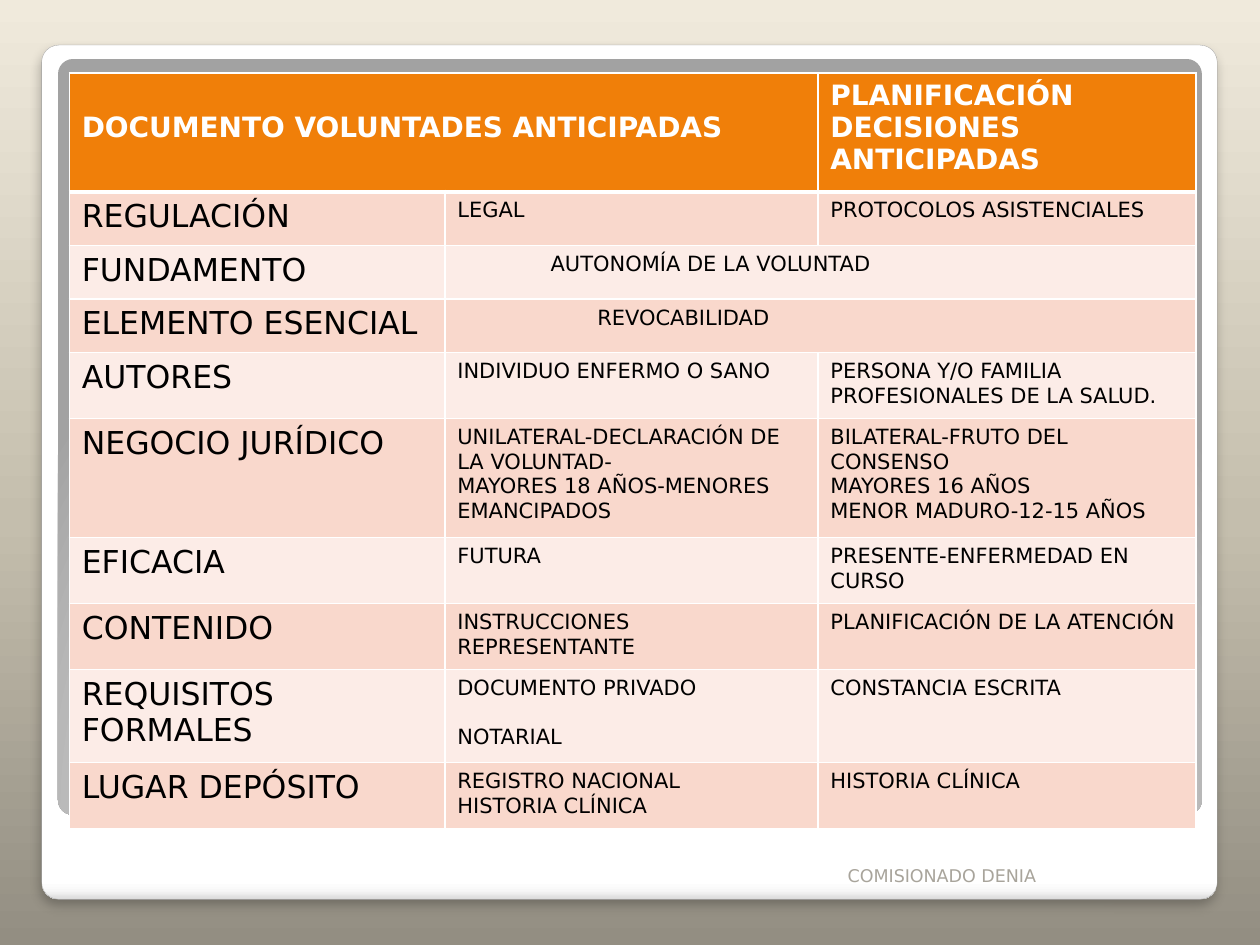
from dataclasses import dataclass

from lxml.etree import SubElement
from pptx import Presentation
from pptx.dml.color import RGBColor
from pptx.enum.shapes import MSO_SHAPE
from pptx.enum.text import MSO_ANCHOR
from pptx.oxml.ns import qn
from pptx.util import Cm, Pt


@dataclass(frozen=True)
class Theme:
    font: str = "DejaVu Sans"
    header: str = "F07F09"
    bands: tuple = ("F9D8CC", "FCECE7")
    white: str = "FFFFFF"
    text: str = "000000"
    edge: str = "A4A4A4"
    footer: str = "A8A49B"
    backdrop: tuple = ((0, "938E82"), (45, "C4BEAD"), (100, "F0EADC"))
    card: tuple = ((0, "FFFFFF"), (98, "FFFFFF"), (99, "F7F7F7"), (100, "DADADA"))
    panel: tuple = ((0, "FFFFFF"), (55, "E1E1E1"), (100, "A2A2A2"))
    header_size: int = 16
    label_size: int = 18
    body_size: int = 12
    footer_size: int = 10


def write_text(frame, text, size, color, bold=False, gap=0):
    frame.word_wrap = True
    for index, line in enumerate(text.split("\n")):
        para = frame.paragraphs[0] if index == 0 else frame.add_paragraph()
        if index:
            para.space_before = Pt(gap)
        span = para.add_run()
        span.text = line
        span.font.name = theme.font
        span.font.size = Pt(size)
        span.font.bold = bold
        span.font.color.rgb = RGBColor.from_string(color)


def paint_gradient(fill, element, stops, angle=None, focus=None):
    fill.gradient()
    gradient = next(element.iter(qn("a:gradFill")))
    for child in list(gradient):
        gradient.remove(child)
    stop_list = SubElement(gradient, qn("a:gsLst"))
    for position, color in stops:
        stop = SubElement(stop_list, qn("a:gs"), pos=str(position * 1000))
        SubElement(stop, qn("a:srgbClr"), val=color)
    if focus:
        circle = SubElement(gradient, qn("a:path"), {"path": "circle"})
        sides = {side: str(value * 1000) for side, value in zip("ltrb", focus)}
        SubElement(circle, qn("a:fillToRect"), sides)
    else:
        SubElement(gradient, qn("a:lin"), ang=str(angle * 60000), scaled="0")


theme = Theme()
deck = Presentation()
deck.slide_width, deck.slide_height = Cm(25.4), Cm(19.05)
slide = deck.slides.add_slide(deck.slide_layouts[6])
paint_gradient(slide.background.fill, slide.element, theme.backdrop, angle=270)

card = slide.shapes.add_shape(
    MSO_SHAPE.ROUNDED_RECTANGLE, Cm(0.84), Cm(0.91), Cm(23.7), Cm(17.22))
panel = slide.shapes.add_shape(
    MSO_SHAPE.ROUNDED_RECTANGLE, Cm(1.17), Cm(1.19), Cm(23.06), Cm(15.24))
for shape in (card, panel):
    shape.adjustments[0] = 0.02
    shape.shadow.inherit = False
paint_gradient(card.fill, card.element, theme.card, angle=90)
paint_gradient(panel.fill, panel.element, theme.panel, focus=(50, 175, 50, -75))
card.line.color.rgb = RGBColor.from_string(theme.edge)
card.line.width = Pt(0.16)
panel.line.fill.background()

effects = next(card.element.iter(qn("a:effectLst")))
shadow = SubElement(effects, qn("a:outerShdw"), blurRad=str(Pt(6)), dist=str(Pt(4)),
                    dir=str(90 * 60000), algn="t", rotWithShape="0")
shadow_color = SubElement(shadow, qn("a:srgbClr"), val=theme.text)
SubElement(shadow_color, qn("a:alpha"), val="25000")

rows = [
    (2.4, "DOCUMENTO VOLUNTADES ANTICIPADAS", "", "PLANIFICACIÓN DECISIONES ANTICIPADAS"),
    (1.08, "REGULACIÓN", "LEGAL", "PROTOCOLOS ASISTENCIALES"),
    (1.08, "FUNDAMENTO", "AUTONOMÍA DE LA VOLUNTAD", ""),
    (1.08, "ELEMENTO ESENCIAL", "REVOCABILIDAD", ""),
    (1.33, "AUTORES", "INDIVIDUO ENFERMO O SANO",
     "PERSONA Y/O FAMILIA\nPROFESIONALES DE LA SALUD."),
    (2.4, "NEGOCIO JURÍDICO",
     "UNILATERAL-DECLARACIÓN DE LA VOLUNTAD-\nMAYORES 18 AÑOS-MENORES EMANCIPADOS",
     "BILATERAL-FRUTO DEL CONSENSO\nMAYORES 16 AÑOS\nMENOR MADURO-12-15 AÑOS"),
    (1.33, "EFICACIA", "FUTURA", "PRESENTE-ENFERMEDAD EN CURSO"),
    (1.33, "CONTENIDO", "INSTRUCCIONES\nREPRESENTANTE", "PLANIFICACIÓN DE LA ATENCIÓN"),
    (1.87, "REQUISITOS FORMALES", "DOCUMENTO PRIVADO\nNOTARIAL", "CONSTANCIA ESCRITA"),
    (1.33, "LUGAR DEPÓSITO", "REGISTRO NACIONAL\nHISTORIA CLÍNICA", "HISTORIA CLÍNICA"),
]
column_widths = (7.57, 7.52, 7.62)
merges = {0: (0, 1), 2: (1, 2), 3: (1, 2)}
left_margins = {(2, 1): 2.13, (3, 1): 3.07}
paragraph_gaps = {(8, 1): 14}

table = slide.shapes.add_table(
    len(rows), len(column_widths), Cm(1.4), Cm(1.47),
    Cm(sum(column_widths)), Cm(sum(row[0] for row in rows))).table
for column, width in zip(table.columns, column_widths):
    column.width = Cm(width)
for row_index, (first, last) in merges.items():
    table.cell(row_index, first).merge(table.cell(row_index, last))

for row_index, (height, *texts) in enumerate(rows):
    table.rows[row_index].height = Cm(height)
    is_header = row_index == 0
    fill_color = theme.header if is_header else theme.bands[(row_index - 1) % 2]
    for column_index, text in enumerate(texts):
        cell = table.cell(row_index, column_index)
        place = (row_index, column_index)
        cell.margin_left = Cm(left_margins.get(place, 0.25))
        cell.margin_top = Cm(0.79 if place == (0, 0) else 0.13)
        properties = cell._tc.get_or_add_tcPr()
        for side in "LRTB":
            thick = (is_header and side == "B") or (row_index == 1 and side == "T")
            border = SubElement(properties, qn(f"a:ln{side}"), w=str(Pt(3 if thick else 1)))
            border_fill = SubElement(border, qn("a:solidFill"))
            SubElement(border_fill, qn("a:srgbClr"), val=theme.white)
        cell.fill.solid()
        cell.fill.fore_color.rgb = RGBColor.from_string(fill_color)
        if not text:
            continue
        if is_header:
            size, color = theme.header_size, theme.white
        else:
            size = theme.body_size if column_index else theme.label_size
            color = theme.text
        write_text(cell.text_frame, text, size=size, color=color, bold=is_header,
                   gap=paragraph_gaps.get(place, 0))

footer = slide.shapes.add_textbox(Cm(16.84), Cm(16.97), Cm(6.35), Cm(1.02))
footer.text_frame.vertical_anchor = MSO_ANCHOR.BOTTOM
write_text(footer.text_frame, "COMISIONADO DENIA", size=theme.footer_size, color=theme.footer)

deck.save("out.pptx")
